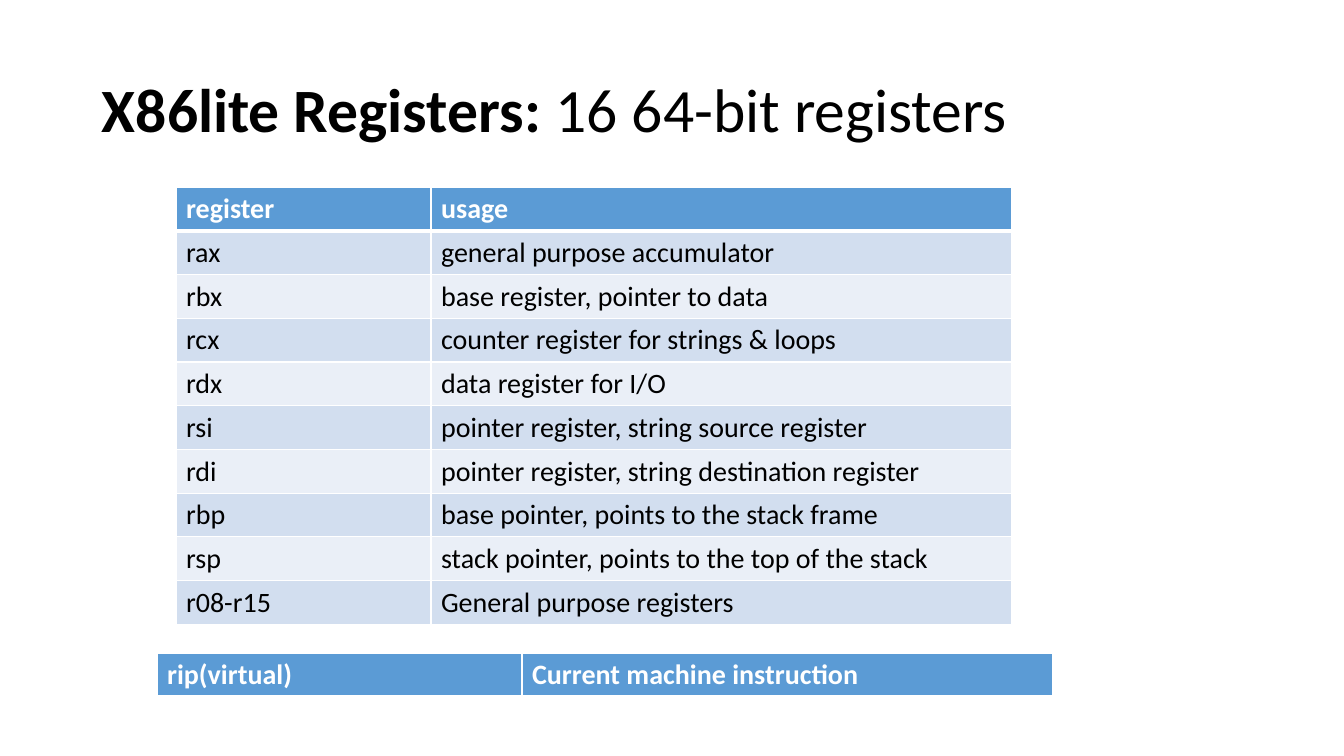
from lxml.etree import SubElement
from pptx import Presentation
from pptx.dml.color import RGBColor
from pptx.enum.text import MSO_ANCHOR
from pptx.oxml.ns import qn
from pptx.util import Pt

EMU_PER_PX = 914400 / 100.8

REGISTERS = [
    ("register", "usage"),
    ("rax", "general purpose accumulator"),
    ("rbx", "base register, pointer to data"),
    ("rcx", "counter register for strings & loops"),
    ("rdx", "data register for I/O"),
    ("rsi", "pointer register, string source register"),
    ("rdi", "pointer register, string destination register"),
    ("rbp", "base pointer, points to the stack frame"),
    ("rsp", "stack pointer, points to the top of the stack"),
    ("r08-r15", "General purpose registers"),
]
INSTRUCTION_POINTER = [("rip(virtual)", "Current machine instruction")]


def px(length):
    return round(length * EMU_PER_PX)


def color(hex_code):
    return RGBColor.from_string(hex_code)


class RegisterSlide:
    """Draws the title and register tables in one shared style."""

    font = "Calibri"
    ink = "000000"
    paper = "FFFFFF"
    header = "5B9BD5"
    bands = ("EAEFF7", "D2DEEF")
    row_height = 41

    def __init__(self, slide):
        self.slide = slide

    def set_font(self, paragraph, size, hex_code, bold=None):
        font = paragraph.font
        font.name, font.size, font.bold = self.font, Pt(size), bold
        font.color.rgb = color(hex_code)

    def title(self, left, top, width, height, topic, detail):
        box = self.slide.shapes.add_textbox(px(left), px(top), px(width), px(height))
        frame = box.text_frame
        frame.word_wrap = True
        frame.vertical_anchor = MSO_ANCHOR.MIDDLE
        heading = frame.paragraphs[0]
        heading.line_spacing = 0.9
        self.set_font(heading, 44, self.ink)
        for wording, bold in ((topic, True), (detail, False)):
            run = heading.add_run()
            run.text = wording
            run.font.bold = bold

    def border(self, cell, side, points):
        properties = cell._tc.get_or_add_tcPr()
        line = SubElement(properties, qn(f"a:ln{side}"), w=str(Pt(points)))
        fill = SubElement(line, qn("a:solidFill"))
        SubElement(fill, qn("a:srgbClr"), val=self.paper)

    def cell(self, cell, wording, row):
        is_header = row == 0
        cell.text = wording
        self.set_font(cell.text_frame.paragraphs[0], 20,
                      self.paper if is_header else self.ink, is_header)
        widths = {"L": 1, "R": 1, "T": 3 if row == 1 else 1, "B": 3 if is_header else 1}
        for side, points in widths.items():
            self.border(cell, side, points)
        cell.fill.solid()
        cell.fill.fore_color.rgb = color(self.header if is_header else self.bands[row % 2])

    def table(self, left, top, height, column_widths, rows):
        frame = self.slide.shapes.add_table(
            len(rows), len(column_widths), px(left), px(top),
            px(sum(column_widths)), px(height))
        table = frame.table
        for column, width in zip(table.columns, column_widths):
            column.width = px(width)
        for row, entries in enumerate(rows):
            table.rows[row].height = px(self.row_height)
            for column, wording in enumerate(entries):
                self.cell(table.cell(row, column), wording, row)
        frame.height = px(height)


def main():
    deck = Presentation()
    deck.slide_width, deck.slide_height = px(1344), px(756)
    page = RegisterSlide(deck.slides.add_slide(deck.slide_layouts[6]))
    page.title(92, 40, 1159, 146, "X86lite Registers: ", "16 64-bit registers")
    page.table(176, 187, 436, (255, 581), REGISTERS)
    page.table(157, 653, 43, (365, 531), INSTRUCTION_POINTER)
    deck.save("out.pptx")


if __name__ == "__main__":
    main()
